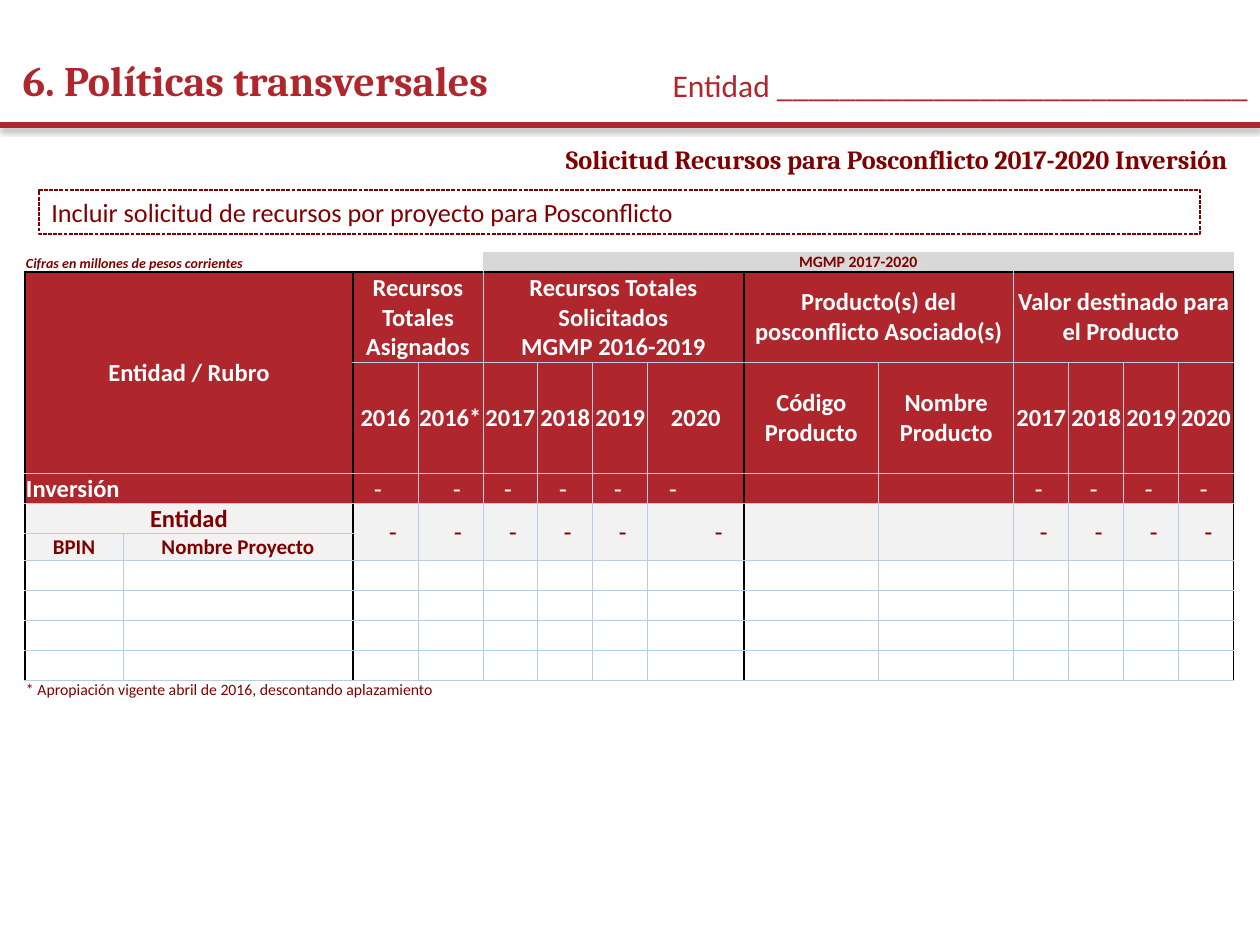
from dataclasses import dataclass

from lxml import etree
from pptx import Presentation
from pptx import util as u
from pptx.dml import color
from pptx.enum import dml, shapes, text
from pptx.oxml import ns

PX = 914400 // 126
LEFT, MID, RIGHT = text.PP_ALIGN.LEFT, text.PP_ALIGN.CENTER, text.PP_ALIGN.RIGHT


@dataclass(frozen=True)
class Theme:
    red: str = "AF272D"
    wine: str = "800000"
    white: str = "FFFFFF"
    black: str = "000000"
    blue: str = "B8CCE4"
    pale: str = "F2F2F2"
    grey: str = "D8D8D8"
    head: str = "Cambria"
    body: str = "Calibri"
    dash: str = "Arial"
    title: int = 24
    name: int = 18
    lead: int = 15
    cell: int = 14
    sub: int = 12
    note: int = 9
    unit: int = 8


def rgb(tone):
    return color.RGBColor.from_string(tone)


def tag(parent, name, **attrs):
    return etree.SubElement(parent, ns.qn(name), {k: str(v) for k, v in attrs.items()})


class Page:
    def __init__(self, deck, theme):
        self.theme = theme
        self.slide = deck.slides.add_slide(deck.slide_layouts[5])

    def words(self, frame, words, size, tone, font=None, bold=False,
              italic=False, align=LEFT):
        frame.text = words
        for par in frame.paragraphs:
            par.alignment = align
            for run in par.runs:
                face = run.font
                face.name, face.size = font or self.theme.body, u.Pt(size)
                face.bold, face.italic = bold, italic
                face.color.rgb = rgb(tone)

    def place(self, shape, box):
        shape.left, shape.top, shape.width, shape.height = (n * PX for n in box)

    def title(self, box, words):
        shape, t = self.slide.shapes.title, self.theme
        self.place(shape, box)
        shape.text_frame.vertical_anchor = text.MSO_ANCHOR.MIDDLE
        self.words(shape.text_frame, words, t.title, t.red, t.head, True)

    def label(self, box, words, size, tone, anchor=text.MSO_ANCHOR.TOP, **style):
        shape = self.slide.shapes.add_textbox(*(n * PX for n in box))
        shape.text_frame.word_wrap = True
        shape.text_frame.vertical_anchor = anchor
        self.words(shape.text_frame, words, size, tone, **style)

    def frame(self, box, words):
        t = self.theme
        shape = self.slide.shapes.add_shape(
            shapes.MSO_SHAPE.RECTANGLE, *(n * PX for n in box))
        shape.shadow.inherit = False
        shape.fill.background()
        shape.line.color.rgb = rgb(t.wine)
        shape.line.width = u.Pt(0.75)
        shape.line.dash_style = dml.MSO_LINE.SQUARE_DOT
        shape.text_frame.vertical_anchor = text.MSO_ANCHOR.TOP
        self.words(shape.text_frame, words, t.lead, t.wine)

    def rule(self, y, width):
        line = self.slide.shapes.add_connector(
            shapes.MSO_CONNECTOR.STRAIGHT, 0, y * PX, width * PX, y * PX)
        line.line.color.rgb = rgb(self.theme.red)
        line.line.width = u.Pt(3)
        glow = tag(line._element.spPr, "a:effectLst")
        shade = tag(glow, "a:outerShdw", blurRad=u.Pt(3.1), dist=u.Pt(1.8),
                    dir=5400000, rotWithShape=0)
        tag(tag(shade, "a:srgbClr", val=self.theme.black), "a:alpha", val=35000)

    def table(self, left, top, cols, rows):
        shape = self.slide.shapes.add_table(
            len(rows), len(cols), left * PX, top * PX, sum(cols) * PX, sum(rows) * PX)
        grid = shape.table
        grid.first_row = grid.horz_banding = False
        # The plain style has neither fills nor lines
        style = grid._tbl.tblPr.find(ns.qn("a:tableStyleId"))
        style.text = "{2D5ABB26-0587-4C30-8999-92F81FD0307C}"
        for col, size in zip(grid.columns, cols):
            col.width = size * PX
        for row, size in zip(grid.rows, rows):
            row.height = size * PX
        for cell in grid.iter_cells():
            self.inset(cell)
            cell.fill.background()
            tag(cell.text_frame.paragraphs[0]._p, "a:endParaRPr",
                sz=self.theme.unit * 100)
        return grid

    def inset(self, cell, left=1, right=1):
        cell.margin_left, cell.margin_right = left * PX, right * PX
        cell.margin_top, cell.margin_bottom = PX, 0

    def fill(self, cell, tone):
        cell.fill.solid()
        cell.fill.fore_color.rgb = rgb(tone)

    def cell(self, grid, row, col, words, size, tone, span=(1, 1), back=None,
             anchor=text.MSO_ANCHOR.MIDDLE, pad=(1, 1), **style):
        cell = grid.cell(row, col)
        if span != (1, 1):
            cell.merge(grid.cell(row + span[0] - 1, col + span[1] - 1))
        if back:
            self.fill(cell, back)
        self.inset(cell, *pad)
        cell.vertical_anchor = anchor
        if words:
            self.words(cell.text_frame, words, size, tone, **style)

    def edges(self, cell, **tones):
        props = cell._tc.get_or_add_tcPr()
        for spot, side in enumerate(s for s in "LRTB" if s in tones):
            tone = tones[side]
            width = u.Pt(1 if tone == self.theme.black else 0.5)
            line = etree.Element(ns.qn(f"a:ln{side}"), w=str(width))
            tag(tag(line, "a:solidFill"), "a:srgbClr", val=tone)
            props.insert(spot, line)

    def borders(self, grid, bars):
        t, last = self.theme, len(grid.rows) - 1
        upright = lambda edge: t.black if edge in bars else t.blue
        level = lambda edge: t.black if edge == 1 else t.blue
        for row in range(last + 1):
            for col in range(len(grid.columns)):
                cell = grid.cell(row, col)
                if cell.is_spanned:
                    continue
                high, wide = (cell.span_height, cell.span_width) \
                    if cell.is_merge_origin else (1, 1)
                sides = {}
                if row > 0:
                    sides["T"] = level(row)
                if row < last:
                    sides["B"] = level(row + high)
                if 0 < row < last:
                    sides.update(L=upright(col), R=upright(col + wide))
                self.edges(cell, **sides)


def main():
    t = Theme()
    deck = Presentation()
    deck.slide_width, deck.slide_height = u.Inches(10), u.Inches(7.5)
    page = Page(deck, t)

    # Heading
    page.rule(125, 1260)
    page.title((10, 45, 1046, 70), "6. Políticas transversales")
    page.label((561, 60, 699, 50), "Entidad " + "_" * 30, t.name, t.red, align=RIGHT)
    page.label((441, 135, 805, 49),
               "Solicitud Recursos para Posconflicto 2017-2020 Inversión ",
               t.lead, t.wine, text.MSO_ANCHOR.MIDDLE, font=t.head, bold=True, align=RIGHT)
    page.frame((39, 190, 1161, 44),
               "Incluir solicitud de recursos por proyecto para Posconflicto")

    # Table grid
    cols = [98, 230, 65, 65] + [55] * 3 + [96, 135, 135] + [55] * 4
    rows = [20, 90, 111, 30, 30, 26] + [30] * 4 + [20]
    grid = page.table(25, 252, cols, rows)

    # Caption row and footnote
    page.cell(grid, 0, 0, "Cifras en millones de pesos corrientes", t.unit, t.wine,
              (1, 2), anchor=text.MSO_ANCHOR.BOTTOM, bold=True, italic=True)
    page.cell(grid, 0, 4, "MGMP 2017-2020", t.note, t.wine, (1, 10), t.grey,
              bold=True, align=MID)
    page.cell(grid, 10, 0, "* Apropiación vigente abril de 2016, descontando aplazamiento",
              t.note, t.wine, (1, 6), anchor=text.MSO_ANCHOR.BOTTOM)

    # Column heads
    heads = [(1, 0, "Entidad / Rubro", (2, 2)),
             (1, 2, "Recursos Totales Asignados", (1, 2)),
             (1, 4, "Recursos Totales Solicitados\vMGMP 2016-2019", (1, 4)),
             (1, 8, "Producto(s) del posconflicto Asociado(s)", (1, 2)),
             (1, 10, "Valor destinado para el Producto ", (1, 4))]
    years = ["2017", "2018", "2019", "2020"]
    names = ["2016", "2016*", *years, "Código Producto", "Nombre Producto", *years]
    heads += [(2, col, name, (1, 1)) for col, name in enumerate(names, 2)]
    for row, col, words, span in heads:
        page.cell(grid, row, col, words, t.cell, t.white, span, t.red,
                  bold=True, align=MID)

    # Total rows
    page.cell(grid, 3, 0, "Inversión", t.cell, t.white, (1, 2), t.red, bold=True)
    page.cell(grid, 4, 0, "Entidad", t.cell, t.wine, (1, 2), t.pale,
              bold=True, align=MID)
    for col, words in enumerate(["BPIN", "Nombre Proyecto"]):
        page.cell(grid, 5, col, words, t.sub, t.wine, back=t.pale, bold=True, align=MID)
    for col in range(2, 14):
        words = "" if col in (8, 9) else "-"
        page.cell(grid, 3, col, words, t.cell, t.white, back=t.red, font=t.dash,
                  pad=(35 if col == 3 else 21, 1))
        page.cell(grid, 4, col, words, t.cell, t.wine, (2, 1), t.pale, font=t.dash,
                  pad=(1, 21), align=RIGHT)

    page.borders(grid, bars=(0, 2, 8, 14))
    deck.save("out.pptx")


if __name__ == "__main__":
    main()
